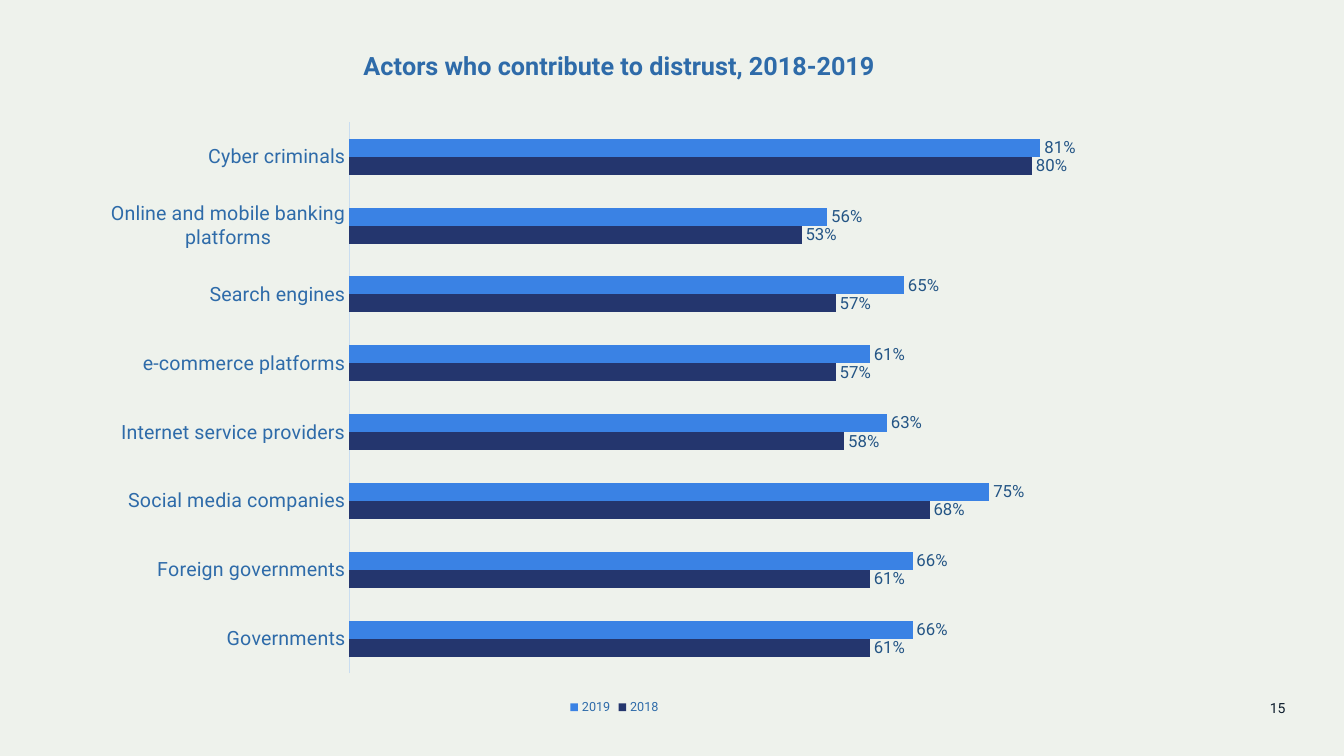
from lxml import etree
from pptx import Presentation
from pptx import util as u
from pptx.chart.data import CategoryChartData
from pptx.dml.color import RGBColor
from pptx.enum import chart as c, text
from pptx.oxml.ns import qn

FONT = "Roboto"
BLUE = "2E6BA9"
DISTRUST = [
    ("Governments", 0.61, 0.66),
    ("Foreign governments", 0.61, 0.66),
    ("Social media companies", 0.68, 0.75),
    ("Internet service providers", 0.58, 0.63),
    ("e-commerce platforms", 0.57, 0.61),
    ("Search engines", 0.57, 0.65),
    ("Online and mobile banking platforms", 0.53, 0.56),
    ("Cyber criminals", 0.80, 0.81),
]


def rgb(value):
    return RGBColor.from_string(value)


def set_font(font, size, color, bold=False):
    font.name = FONT
    font.size = u.Pt(size)
    font.bold = bold
    font.color.rgb = rgb(color)


def set_layout(parent, index, inner=False, **fractions):
    for old in parent.findall(qn("c:layout")):
        parent.remove(old)
    layout = etree.Element(qn("c:layout"))
    manual = etree.SubElement(layout, qn("c:manualLayout"))
    settings = {"layoutTarget": "inner"} if inner else {}
    settings.update(xMode="edge", yMode="edge", **fractions)
    for tag, value in settings.items():
        etree.SubElement(manual, qn(f"c:{tag}")).set("val", str(value))
    parent.insert(index, layout)


def add_distrust_chart(slide, left, top, width, height):
    names, earlier, later = zip(*DISTRUST)
    data = CategoryChartData(number_format="0%")
    data.categories = names
    data.add_series("2018", earlier)
    data.add_series("2019", later)
    chart = slide.shapes.add_chart(
        c.XL_CHART_TYPE.BAR_CLUSTERED, u.Inches(left), u.Inches(top),
        u.Inches(width), u.Inches(height), data).chart
    set_font(chart.font, 10, "0C1C2C")

    chart.has_title = True
    heading = chart.chart_title.text_frame
    heading.text = "Actors who contribute to distrust, 2018-2019"
    set_font(heading.paragraphs[0].font, 18, BLUE, True)
    set_layout(chart.chart_title._element, 1, x=0.256, y=0.034)
    set_layout(chart._chartSpace.chart.plotArea, 0, inner=True,
               x=0.247, y=0.145, w=0.733, h=0.79)

    chart.has_legend = True
    chart.legend.position = c.XL_LEGEND_POSITION.BOTTOM
    chart.legend.include_in_layout = False
    set_font(chart.legend.font, 9, BLUE)

    actors = chart.category_axis
    actors.major_tick_mark = c.XL_TICK_MARK.NONE
    actors.format.line.color.rgb = rgb("C9DDF0")
    actors.format.line.width = u.Pt(0.75)
    set_font(actors.tick_labels.font, 14, BLUE)
    shares = chart.value_axis
    shares.minimum_scale, shares.maximum_scale = 0, 0.9
    shares.has_major_gridlines = False
    shares.visible = False

    bars = chart.plots[0]
    bars.gap_width = 182
    bars.overlap = 0
    bars.vary_by_categories = False
    for year, color in zip(bars.series, ("24366E", "3A82E4")):
        year.format.fill.solid()
        year.format.fill.fore_color.rgb = rgb(color)
        labels = year.data_labels
        labels.show_value = True
        labels.number_format = "0%"
        labels.number_format_is_linked = False
        labels.position = c.XL_LABEL_POSITION.OUTSIDE_END
        set_font(labels.font, 12, "245585")


def add_page_number(slide, left, top, width, height):
    frame = slide.shapes.add_textbox(
        u.Inches(left), u.Inches(top), u.Inches(width), u.Inches(height)).text_frame
    frame.word_wrap = True
    frame.margin_left = frame.margin_right = frame.margin_top = frame.margin_bottom = 0
    number = frame.paragraphs[0]
    number.text = "15"
    number.alignment = text.PP_ALIGN.RIGHT
    set_font(number.font, 10, "0C1C2C")


def main():
    deck = Presentation()
    deck.slide_width, deck.slide_height = u.Inches(13.33), u.Inches(7.5)
    slide = deck.slides.add_slide(deck.slide_layouts[6])
    slide.background.fill.solid()
    slide.background.fill.fore_color.rgb = rgb("EEF2EC")
    add_page_number(slide, 9.75, 6.94, 3, 0.19)
    add_distrust_chart(slide, 0.9, 0.21, 10.39, 6.92)
    deck.save("out.pptx")


if __name__ == "__main__":
    main()
